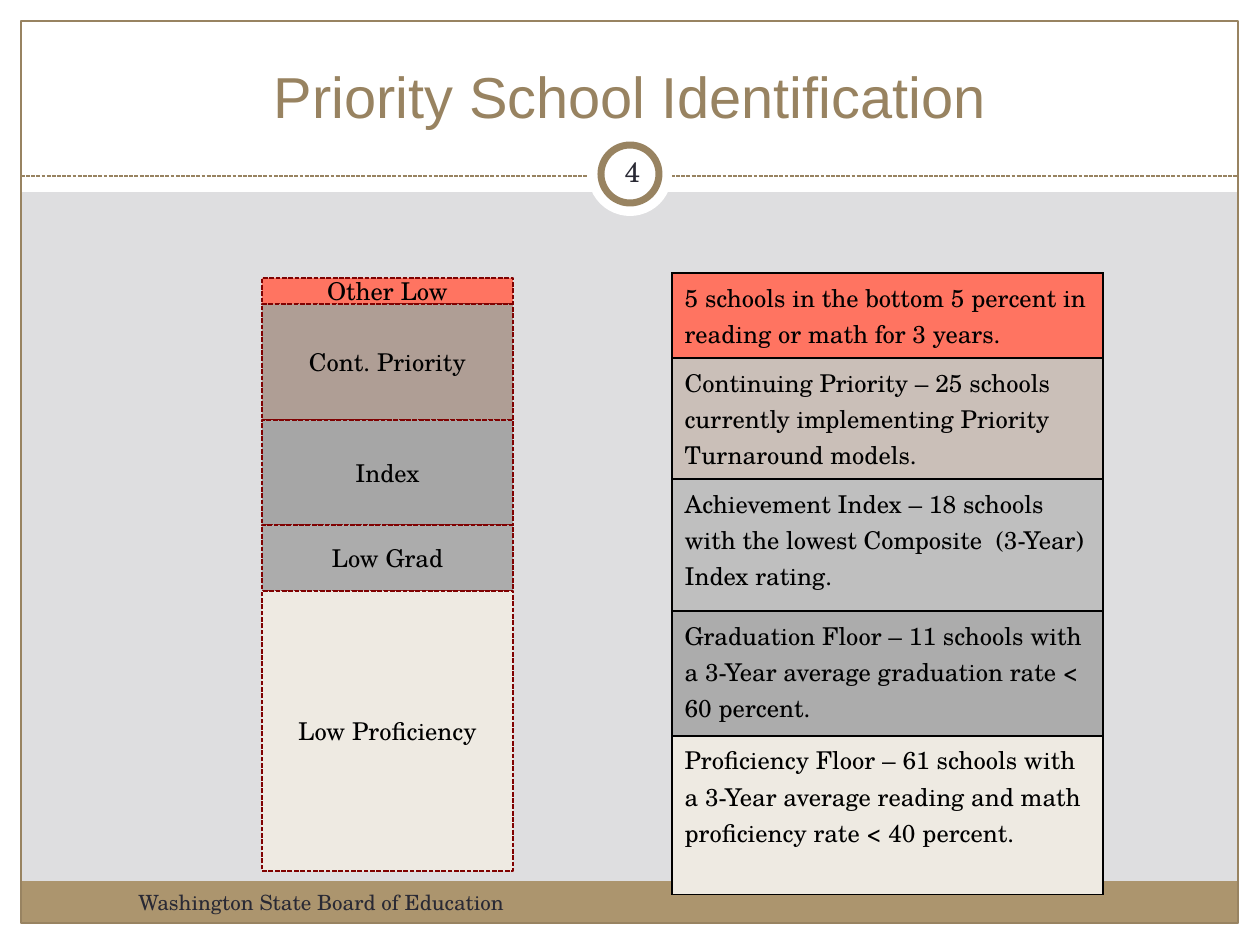
from dataclasses import dataclass
from itertools import pairwise

from lxml import etree
from pptx import Presentation
from pptx.dml.color import RGBColor
from pptx.enum.dml import MSO_LINE
from pptx.enum.shapes import MSO_CONNECTOR, MSO_SHAPE
from pptx.enum.text import MSO_ANCHOR, PP_ALIGN
from pptx.oxml.ns import qn
from pptx.util import Emu, Pt

RECT, OVAL = MSO_SHAPE.RECTANGLE, MSO_SHAPE.OVAL
STRAIGHT = MSO_CONNECTOR.STRAIGHT
DASH = MSO_LINE.SQUARE_DOT
LEFT, CENTER = PP_ALIGN.LEFT, PP_ALIGN.CENTER
TOP, MIDDLE, BOTTOM = MSO_ANCHOR.TOP, MSO_ANCHOR.MIDDLE, MSO_ANCHOR.BOTTOM
SCALE = 914400 / 126
WIDE, HIGH = 1260, 945


@dataclass(frozen=True)
class Theme:
    head: str = "Arial"
    body: str = "TeX Gyre Schola"
    ground: str = "DEDEE0"
    white: str = "FFFFFF"
    black: str = "000000"
    ink: str = "292934"
    gold: str = "988361"
    tan: str = "AC956E"
    red: str = "800101"
    coral: str = "FF7461"
    brown: str = "AF9E95"
    sand: str = "CABFB8"
    steel: str = "A6A6A6"
    silver: str = "BFBFBF"
    gray: str = "ACACAC"
    cream: str = "EEEAE2"
    title: int = 33
    number: int = 16
    text: int = 14
    foot: int = 12


def px(count):
    return Emu(round(count * SCALE))


def rgb(code):
    return RGBColor.from_string(code)


class Deck:
    def __init__(self, theme):
        self.theme = theme
        self.file = Presentation()
        self.file.slide_width, self.file.slide_height = px(WIDE), px(HIGH)
        self.slide = self.file.slides.add_slide(self.file.slide_layouts[5])
        self.paint(self.slide.background.fill, theme.ground)

    def paint(self, fill, color):
        if color:
            fill.solid()
            fill.fore_color.rgb = rgb(color)
        else:
            fill.background()

    def stroke(self, line, color, width, dash=None):
        line.color.rgb = rgb(color)
        line.width = Pt(width)
        if dash:
            line.dash_style = dash

    def letter(self, frame, text, size, color, font=None, align=LEFT, anchor=TOP):
        frame.word_wrap = True
        frame.vertical_anchor = anchor
        frame.text = text
        for para in frame.paragraphs:
            para.alignment = align
            for run in para.runs:
                run.font.name = font or self.theme.body
                run.font.size = Pt(size)
                run.font.color.rgb = rgb(color)

    def shape(self, kind, box, fill=None, line=None, width=0.75, dash=None):
        shape = self.slide.shapes.add_shape(kind, *map(px, box))
        shape.shadow.inherit = False
        self.paint(shape.fill, fill)
        if line:
            self.stroke(shape.line, line, width, dash)
        else:
            shape.line.fill.background()
        return shape

    def rule(self, start, end, color):
        line = self.slide.shapes.add_connector(STRAIGHT, *map(px, start + end))
        self.stroke(line.line, color, 0.75, DASH)
        etree.SubElement(line.element.spPr, qn("a:effectLst"))

    def title(self, text, box):
        title = self.slide.shapes.title
        title.left, title.top, title.width, title.height = map(px, box)
        self.letter(title.text_frame, text, self.theme.title, self.theme.gold,
                    self.theme.head, CENTER, BOTTOM)
        title.element.getparent().append(title.element)

    def label(self, text, box, size, align=LEFT, anchor=TOP, inset=None):
        frame = self.slide.shapes.add_textbox(*map(px, box)).text_frame
        if inset is not None:
            frame.margin_left = frame.margin_right = px(inset)
            frame.margin_top = frame.margin_bottom = px(inset)
        self.letter(frame, text, size, self.theme.ink, None, align, anchor)

    def edge(self, cell):
        props = cell._tc.get_or_add_tcPr()
        for at, side in enumerate(("lnL", "lnR", "lnT", "lnB")):
            line = etree.Element(qn(f"a:{side}"), w=str(Pt(1)))
            fill = etree.SubElement(line, qn("a:solidFill"))
            etree.SubElement(fill, qn("a:srgbClr"), val=self.theme.black)
            props.insert(at, line)

    def table(self, rows, left, top, width):
        high = sum(row[0] for row in rows)
        box = map(px, (left, top, width, high))
        table = self.slide.shapes.add_table(len(rows), 1, *box).table
        table.first_row = table.horz_banding = False
        for at, (tall, text, fill) in enumerate(rows):
            table.rows[at].height = px(tall)
            cell = table.cell(at, 0)
            self.paint(cell.fill, fill)
            self.edge(cell)
            self.letter(cell.text_frame, text, self.theme.text, self.theme.black)

    def stack(self, bars, edges, left, width):
        for (text, fill), (top, end) in zip(bars, pairwise(edges)):
            bar = self.shape(RECT, (left, top, width, end - top), fill,
                             self.theme.red, 0.9, DASH)
            self.letter(bar.text_frame, text, self.theme.text, self.theme.black,
                        None, CENTER, MIDDLE)


def main():
    theme = Theme()
    deck = Deck(theme)

    for box in ((0, 924, WIDE, 21), (0, 0, WIDE, 192),
                (0, 0, 21, HIGH), (1239, 0, 21, HIGH)):
        deck.shape(RECT, box, theme.white)
    deck.shape(RECT, (21, 881, 1217, 43), theme.tan)
    deck.shape(RECT, (21, 21, 1217, 902), None, theme.gold)
    deck.rule((21, 176), (1239, 176), theme.gold)
    deck.shape(OVAL, (588, 132, 84, 84), theme.white)
    deck.shape(OVAL, (601, 145, 58, 58), theme.white, theme.gold, 4)

    deck.title("Priority School Identification", (42, 32, 1176, 104))
    deck.table((
        (69, "5 schools in the bottom 5 percent in reading or math for 3 years.",
         theme.coral),
        (98, "Continuing Priority – 25 schools currently implementing "
         "Priority Turnaround models.", theme.sand),
        (132, "Achievement Index – 18 schools with the lowest Composite  "
         "(3-Year) Index rating.", theme.silver),
        (125, "Graduation Floor – 11 schools with a 3-Year average "
         "graduation rate < 60 percent.", theme.gray),
        (159, "Proficiency Floor – 61 schools with a 3-Year average reading "
         "and math proficiency rate < 40 percent.", theme.cream),
    ), 672, 273, 431)
    deck.label("Washington State Board of Education", (126, 883, 494, 50),
               theme.foot)
    deck.label("4", (601, 141, 63, 60), theme.number, CENTER, MIDDLE, 6)
    deck.stack((
        ("Other Low", theme.coral),
        ("Cont. Priority", theme.brown),
        ("Index", theme.steel),
        ("Low Grad", theme.gray),
        ("Low Proficiency", theme.cream),
    ), (278, 304, 420, 525, 591, 871), 262, 251)

    deck.file.save("out.pptx")


if __name__ == "__main__":
    main()
